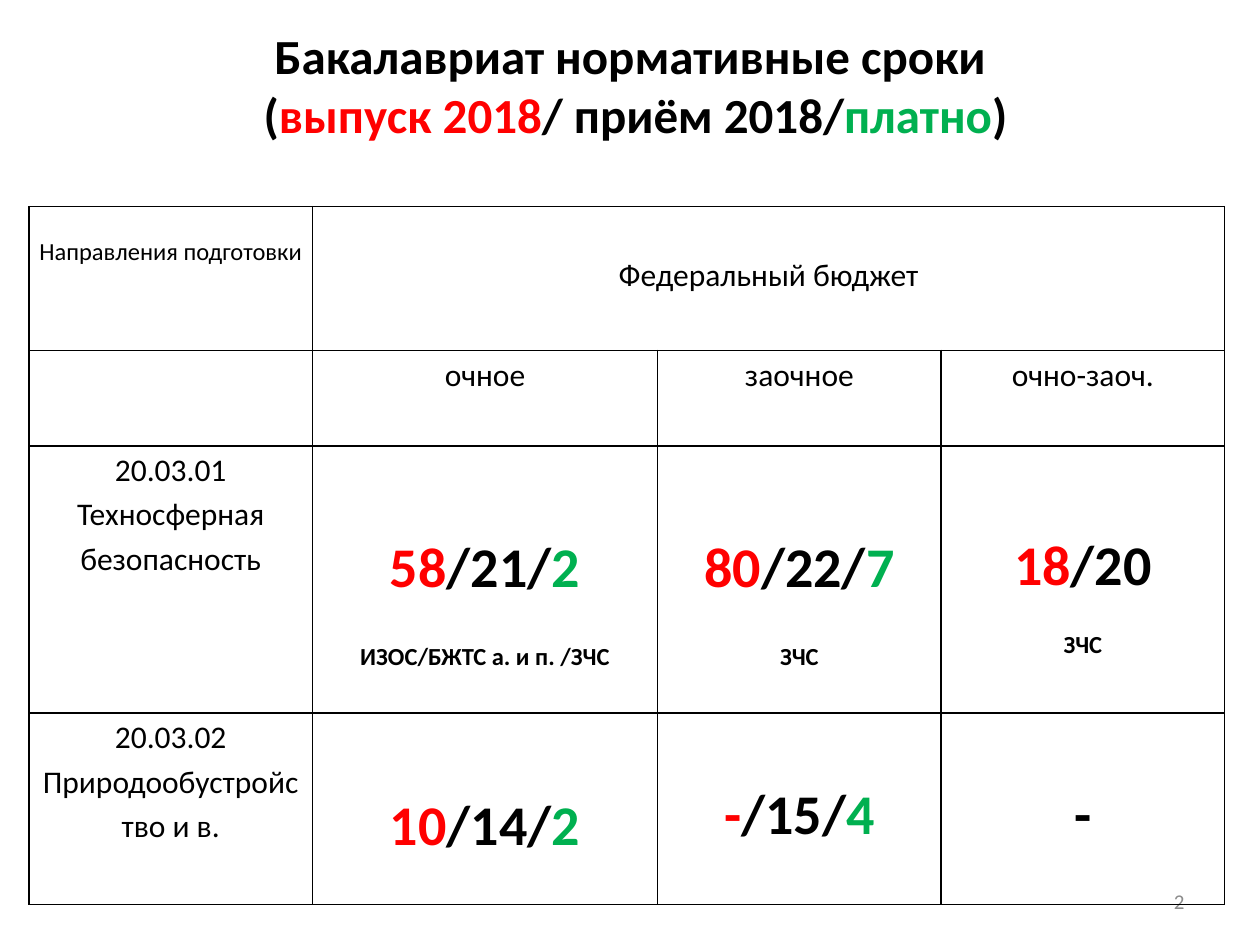
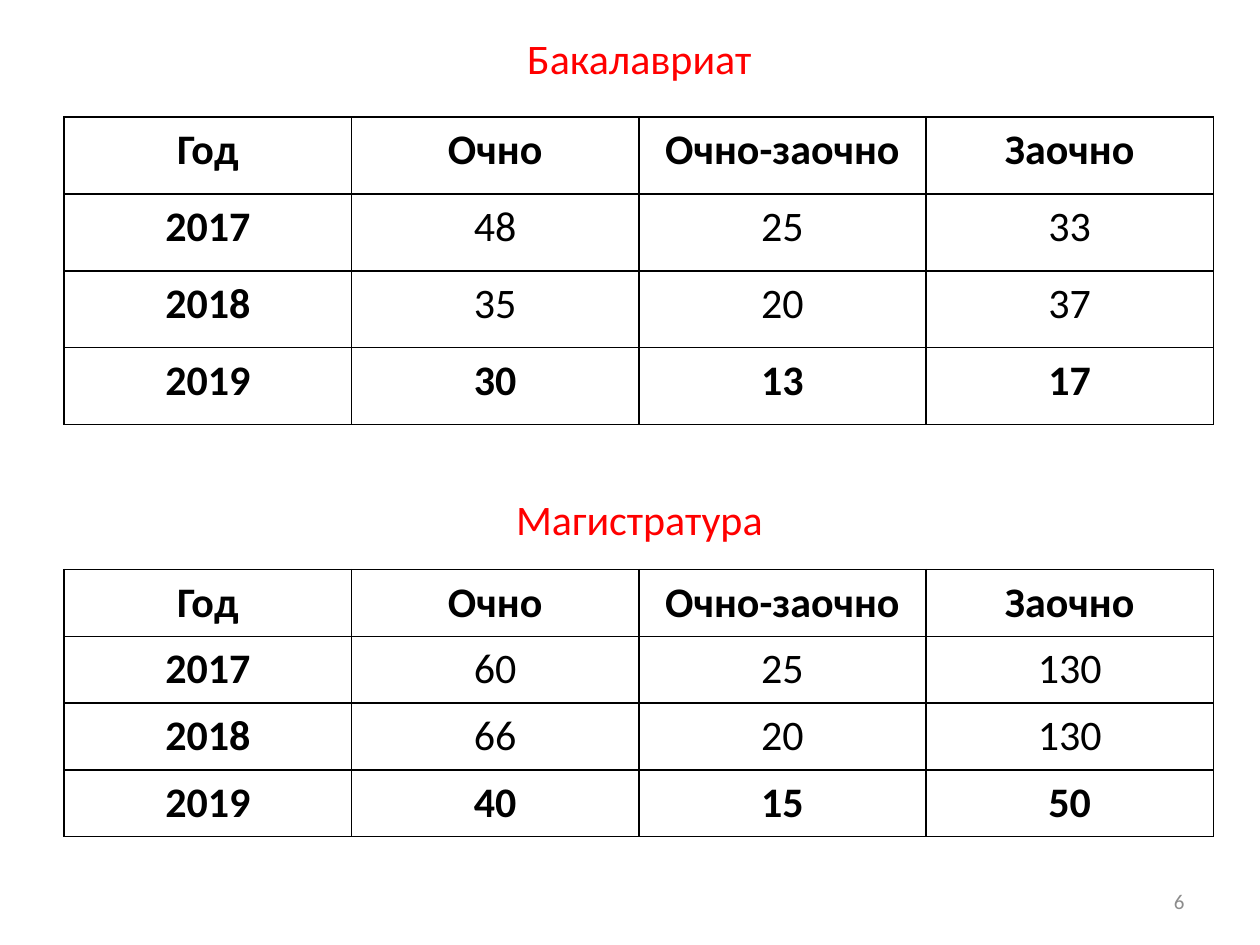
from dataclasses import dataclass

from lxml.etree import SubElement
from pptx import Presentation
from pptx.dml.color import RGBColor as Rgb
from pptx.enum.text import MSO_ANCHOR as Anchor, PP_ALIGN as Align
from pptx.oxml.ns import qn
from pptx.util import Inches, Pt

FONT = "Calibri"
COLORS = {"black": "000000", "red": "FF0000", "green": "00B050", "grey": "8C8C8C"}
SPREAD = 1.15


@dataclass(frozen=True)
class Run:
    text: str
    color: str = "black"


@dataclass(frozen=True)
class Line:
    runs: tuple[Run, ...]
    size: int = 18
    bold: bool = False
    spacing: float = SPREAD
    before: int = 0


@dataclass(frozen=True)
class Cell:
    lines: tuple[Line, ...] = ()
    top: float = 0
    span: int = 1


@dataclass(frozen=True)
class Box:
    left: float
    top: float
    width: float
    height: float


@dataclass(frozen=True)
class Grid:
    left: float
    top: float
    cols: tuple[float, ...]
    rows: tuple[float, ...]
    cells: tuple[tuple[Cell, ...], ...]


def plain(text: str, size: int = 18, bold: bool = False, color: str = "black",
          spacing: float = SPREAD, before: int = 0) -> Line:
    """A line of one colour."""
    return Line((Run(text, color),), size, bold, spacing, before)


def quota(text: str, spacing: float = SPREAD) -> Line:
    """Places as graduates/intake/paid, in red, black and green."""
    parts = text.split("/")
    runs = [Run(parts[0], "red")]
    if len(parts) == 3:
        runs += [Run(f"/{parts[1]}/"), Run(parts[2], "green")]
    else:
        runs.append(Run(f"/{parts[1]}"))
    return Line(tuple(runs), 32, True, spacing)


def note(text: str, spacing: float = SPREAD, before: int = 20) -> Line:
    return plain(text, 14, True, spacing=spacing, before=before)


def write(frame, lines: tuple[Line, ...], align=Align.CENTER) -> None:
    for i, line in enumerate(lines):
        para = frame.paragraphs[0] if i == 0 else frame.add_paragraph()
        para.alignment = align
        para.line_spacing = line.spacing
        para.space_before = Pt(line.before)
        for part in line.runs:
            if part.text == "\n":
                para.add_line_break()
                continue
            run = para.add_run()
            run.text = part.text
            font = run.font
            font.name, font.size, font.bold = FONT, Pt(line.size), line.bold
            font.color.rgb = Rgb.from_string(COLORS[part.color])


def add_text(slide, box: Box, line: Line, align=Align.CENTER, anchor=Anchor.TOP) -> None:
    shape = slide.shapes.add_textbox(Inches(box.left), Inches(box.top),
                                     Inches(box.width), Inches(box.height))
    frame = shape.text_frame
    frame.word_wrap = True
    frame.vertical_anchor = anchor
    write(frame, (line,), align)


def add_page(slide, number: int) -> None:
    line = plain(str(number), 12, color="grey", spacing=1.0)
    add_text(slide, Box(7.17, 6.95, 2.33, 0.4), line, Align.RIGHT, Anchor.MIDDLE)


def rule(cell) -> None:
    """Black one-point lines on all four sides of a cell."""
    props = cell._tc.get_or_add_tcPr()
    for side in ("lnL", "lnR", "lnT", "lnB"):
        edge = SubElement(props, qn(f"a:{side}"), w=str(Pt(1)))
        fill = SubElement(edge, qn("a:solidFill"))
        SubElement(fill, qn("a:srgbClr"), val=COLORS["black"])


def add_grid(slide, grid: Grid) -> None:
    frame = slide.shapes.add_table(
        len(grid.rows), len(grid.cols), Inches(grid.left), Inches(grid.top),
        Inches(sum(grid.cols)), Inches(sum(grid.rows)))
    table = frame.table
    table.first_row = table.horz_banding = False
    for col, width in zip(table.columns, grid.cols):
        col.width = Inches(width)
    for row, height in zip(table.rows, grid.rows):
        row.height = Inches(height)
    for cell in table.iter_cells():
        rule(cell)
        cell.fill.background()
        cell.margin_left = cell.margin_right = Inches(0.07)
        cell.margin_top = cell.margin_bottom = 0
    for r, row in enumerate(grid.cells):
        for c, data in enumerate(row):
            cell = table.cell(r, c)
            if data.span > 1:
                cell.merge(table.cell(r, c + data.span - 1))
            cell.margin_top = Inches(data.top)
            write(cell.text_frame, data.lines)


def year_grid(top: float, height: float, years: tuple[tuple[int, ...], ...]) -> Grid:
    """Places by year: the heads, the years and the last row are bold."""
    rows = (("Год", "Очно", "Очно-заочно", "Заочно"),) + years
    last = len(rows) - 1
    cells = tuple(
        tuple(Cell((plain(str(item), 24, r in (0, last) or c == 0),))
              for c, item in enumerate(row))
        for r, row in enumerate(rows))
    return Grid(0.51, top, (2.28,) * 4, (height,) * len(rows), cells)


TITLE = Line((Run("Бакалавриат нормативные сроки"), Run("\n"), Run(" ("),
              Run("выпуск 2018", "red"), Run("/ приём 2018/"),
              Run("платно", "green"), Run(")")), 28, True, 1.0)

TERMS = Grid(0.23, 1.64, (2.25, 2.74, 2.25, 2.25), (1.14, 0.76, 2.12, 1.52), (
    (Cell((plain("Направления подготовки", 14, spacing=1.0),), 0.24),
     Cell((plain("Федеральный бюджет"),), 0.35, 3)),
    (Cell(),) + tuple(Cell((plain(form),)) for form in ("очное", "заочное", "очно-заоч.")),
    (Cell((plain("20.03.01 Техносферная безопасность"),)),
     Cell((quota("58/21/2"), note("ИЗОС/БЖТС а. и п. /ЗЧС")), 0.62),
     Cell((quota("80/22/7"), note("ЗЧС")), 0.62),
     Cell((quota("18/20", 1.0), note("ЗЧС", 1.0, 17)), 0.68)),
    (Cell((plain("20.03.02 Природообустройство и в."),)),
     Cell((quota("10/14/2"),), 0.55),
     Cell((quota("-/15/4", 1.0),), 0.54),
     Cell((plain("-", 32, True, spacing=1.0),), 0.54)),
))

LEVELS = (
    ("Бакалавриат", 0.21, year_grid(0.93, 0.61, (
        (2017, 48, 25, 33), (2018, 35, 20, 37), (2019, 30, 13, 17)))),
    ("Магистратура", 3.87, year_grid(4.52, 0.53, (
        (2017, 60, 25, 130), (2018, 66, 20, 130), (2019, 40, 15, 50)))),
)


def main() -> None:
    deck = Presentation()
    deck.slide_width, deck.slide_height = Inches(10), Inches(7.5)
    blank = deck.slide_layouts[6]

    terms = deck.slides.add_slide(blank)
    add_page(terms, 2)
    add_text(terms, Box(0, 0.15, 10, 1.04), TITLE, anchor=Anchor.MIDDLE)
    add_grid(terms, TERMS)

    years = deck.slides.add_slide(blank)
    add_page(years, 6)
    for name, top, grid in LEVELS:
        add_grid(years, grid)
        add_text(years, Box(0.51, top, 9.13, 0.5),
                 plain(name, 24, color="red", spacing=1.0))

    deck.save("out.pptx")


if __name__ == "__main__":
    main()
